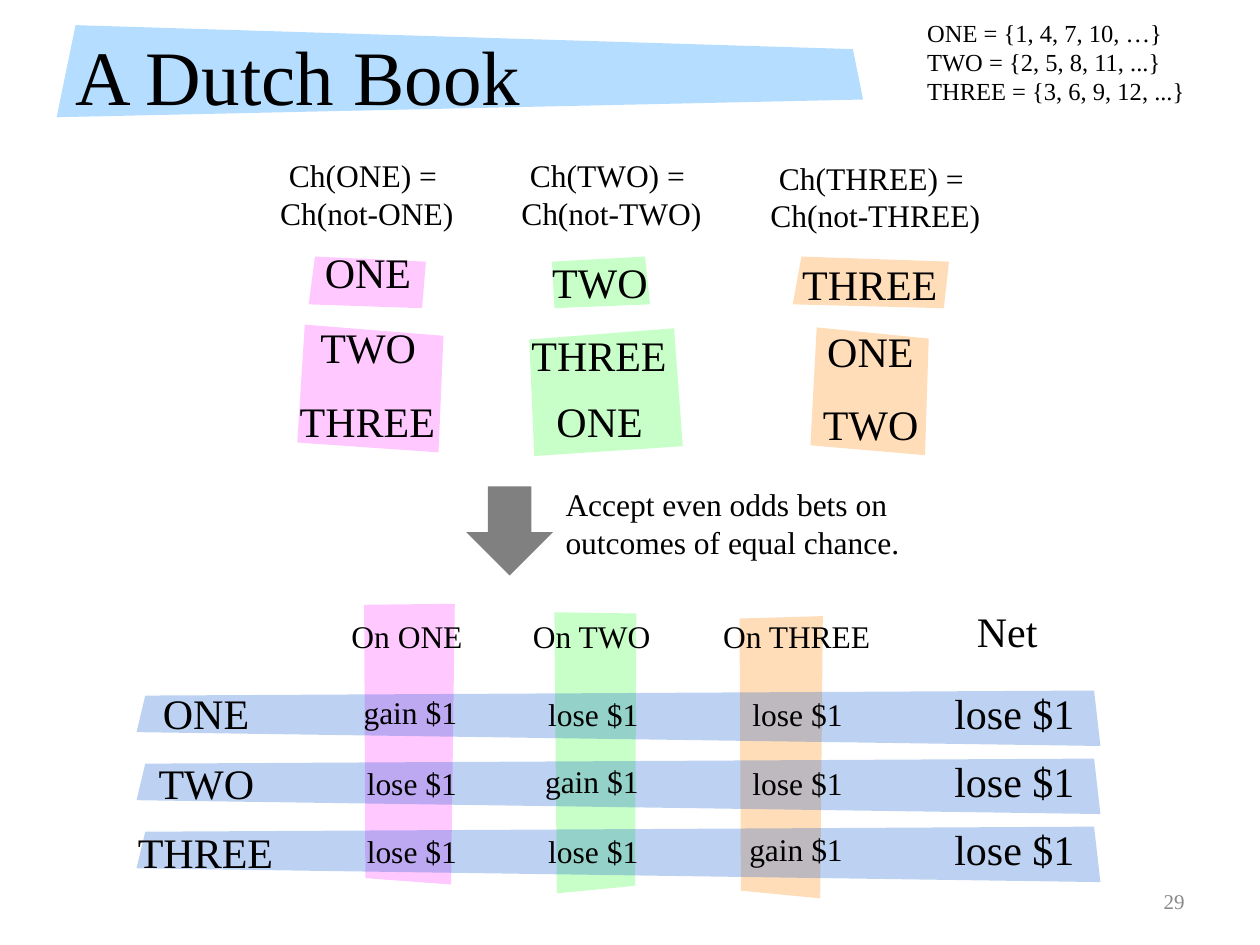
from lxml import etree
from pptx import Presentation
from pptx.dml.color import RGBColor
from pptx.enum.shapes import MSO_SHAPE
from pptx.enum.text import MSO_ANCHOR, PP_ALIGN
from pptx.oxml.ns import qn
from pptx.util import Pt

DOWN_ARROW = MSO_SHAPE.DOWN_ARROW
TOP, MIDDLE = MSO_ANCHOR.TOP, MSO_ANCHOR.MIDDLE
LEFT, CENTER, RIGHT = PP_ALIGN.LEFT, PP_ALIGN.CENTER, PP_ALIGN.RIGHT
FONT = "Times New Roman"
COLORS = {
    "text": "000000",
    "number": "898989",
    "title": "B4DDFF",
    "pink": "FFC8FF",
    "green": "C8FFC8",
    "orange": "FFDDB9",
    "row": "0054CF",
    "arrow": "808080",
}
OUTCOMES = ("ONE", "TWO", "THREE")
WORD_WIDTHS = {
    ("ONE", 24): 65, ("TWO", 24): 70, ("THREE", 24): 93.6,
    ("On ONE", 18): 78.5, ("On TWO", 18): 82, ("On THREE", 18): 99.4,
    ("Net", 24): 49.7, ("gain $1", 18): 69.8,
    ("lose $1", 18): 66.2, ("lose $1", 24): 83.5,
}


def add_text(slide, text, left, top, width, height, size=18, color="text",
             align=LEFT, anchor=TOP, wrap=True):
    box = slide.shapes.add_textbox(Pt(left), Pt(top), Pt(width), Pt(height))
    frame = box.text_frame
    frame.word_wrap = wrap
    frame.vertical_anchor = anchor
    frame.text = text
    for paragraph in frame.paragraphs:
        paragraph.alignment = align
        font = paragraph.runs[0].font
        font.name = FONT
        font.size = Pt(size)
        font.color.rgb = RGBColor.from_string(COLORS[color])


def add_word(slide, text, center, top, size=24):
    width = WORD_WIDTHS[text, size]
    add_text(slide, text, center - width / 2, top, width, size + 12,
             size=size, wrap=False)


def paint(shape, color, opacity=None):
    shape.shadow.inherit = False
    shape.fill.solid()
    shape.fill.fore_color.rgb = RGBColor.from_string(COLORS[color])
    shape.line.fill.background()
    if opacity:
        fill_color = next(shape._element.spPr.iter(qn("a:srgbClr")))
        etree.SubElement(fill_color, qn("a:alpha"), val=str(opacity * 1000))


def add_outline(slide, left, top, points, color, opacity=None):
    corners = [(Pt(left + x), Pt(top + y)) for x, y in points]
    builder = slide.shapes.build_freeform(*corners[0])
    builder.add_line_segments(corners[1:], close=True)
    paint(builder.convert_to_shape(), color, opacity)


def add_title(slide, left, top):
    band = [(10.8, 0), (455, 13.7), (460.8, 42.5), (0, 52.6)]
    add_outline(slide, left, top, band, "title")
    add_text(slide, "A Dutch Book", left + 3.6, top - 5.8, 602.6, 67.7,
             size=44, anchor=MIDDLE)


def add_chance_panel(slide, left, top, width, panel):
    first_y = (60.9, 63.8, 90.4, 88.2)
    rest_y = [panel["rest_top"] + y for y in (0, 6.4, 73, 67.4)]
    for xs, ys in ((panel["first_x"], first_y), (panel["rest_x"], rest_y)):
        add_outline(slide, left, top, zip(xs, ys), panel["color"])
    words = panel["words"]
    add_text(slide, f"Ch({words[0]}) =\n Ch(not-{words[0]})", left,
             top + panel["head_top"], width, 51, align=CENTER)
    for word, word_top in zip(words, panel["word_tops"]):
        add_word(slide, word, left + panel["center"], top + word_top)


def add_arrow_note(slide, left, top):
    add_text(slide, "Accept even odds bets on outcomes of equal chance.",
             left + 49.7, top - 4.3, 211.7, 51)
    arrow = slide.shapes.add_shape(DOWN_ARROW, Pt(left), Pt(top),
                                   Pt(49.7), Pt(51))
    paint(arrow, "arrow")


def add_bets(slide, left, top):
    stripes = {
        "orange": [(344.6, 8.5), (392.2, 7.1), (390.7, 168.4), (345.4, 164)],
        "green": [(285.6, 5.6), (238.8, 4.9), (240.2, 165.5), (284.9, 161.2)],
        "pink": [(130.1, 0.6), (181.9, 0), (179.8, 160.4), (130.8, 156.8)],
    }
    for color, points in stripes.items():
        add_outline(slide, left, top, points, color)
    row_band = [(0, 23.8), (550.8, 31.7), (547.2, 0), (5, 2.9)]
    for row in range(3):
        add_outline(slide, left, top + 49.6 + 38.9 * row, row_band,
                    "row", opacity=26)

    for outcome, center in zip(OUTCOMES, (155, 260.4, 377.8)):
        add_word(slide, f"On {outcome}", left + center, top + 4.2, size=18)
    add_word(slide, "Net", left + 498, top - 2.3)

    for row, outcome in enumerate(OUTCOMES):
        add_word(slide, outcome, left + 40.5, top + 44.5 + 39.6 * row)
        for column, center in enumerate((157.6, 261.3, 378)):
            wins = row == column
            add_word(slide, "gain $1" if wins else "lose $1", left + center,
                     top + 48.8 + 39.2 * row - 1.2 * wins, size=18)
        add_word(slide, "lose $1", left + 502, top + 44.5 + 38.9 * row)


def main():
    presentation = Presentation()
    presentation.slide_width = Pt(720)
    presentation.slide_height = Pt(540)
    slide = presentation.slides.add_slide(presentation.slide_layouts[6])

    add_title(slide, 32.4, 14.4)
    add_text(slide, "29", 516.2, 500.4, 167.8, 28.8, size=12, color="number",
             align=RIGHT, anchor=MIDDLE)
    add_text(slide, "ONE = {1, 4, 7, 10, …}\nTWO = {2, 5, 8, 11, ...}\n"
             "THREE = {3, 6, 9, 12, ...}", 522.7, 6.5, 162.7, 58.3,
             size=14, wrap=False)

    panels = [
        dict(color="pink", words=("ONE", "TWO", "THREE"), center=71.3,
             head_top=0, word_tops=(51.8, 94.3, 136.8), rest_top=99.8,
             first_x=(40.3, 103.7, 101.5, 36.7),
             rest_x=(34.5, 113.7, 110.9, 30.2)),
        dict(color="green", words=("TWO", "THREE", "ONE"), center=64,
             head_top=0, word_tops=(57.6, 99.3, 136.8), rest_top=101.9,
             first_x=(89.2, 36, 37.4, 92.1),
             rest_x=(105.8, 23, 25.9, 110.8)),
        dict(color="orange", words=("THREE", "ONE", "TWO"), center=79,
             head_top=1.4, word_tops=(58.3, 96.5, 138.2), rest_top=101.4,
             first_x=(38.9, 123.2, 120.3, 33.9),
             rest_x=(47.6, 111.6, 109.5, 44)),
    ]
    for index, (panel, width) in enumerate(zip(panels, (135.4, 135.4, 157.7))):
        add_chance_panel(slide, 139.7 * (index + 1), 85.7, width, panel)

    add_arrow_note(slide, 266.4, 277.9)
    add_bets(slide, 78, 345)
    presentation.save("out.pptx")


if __name__ == "__main__":
    main()
